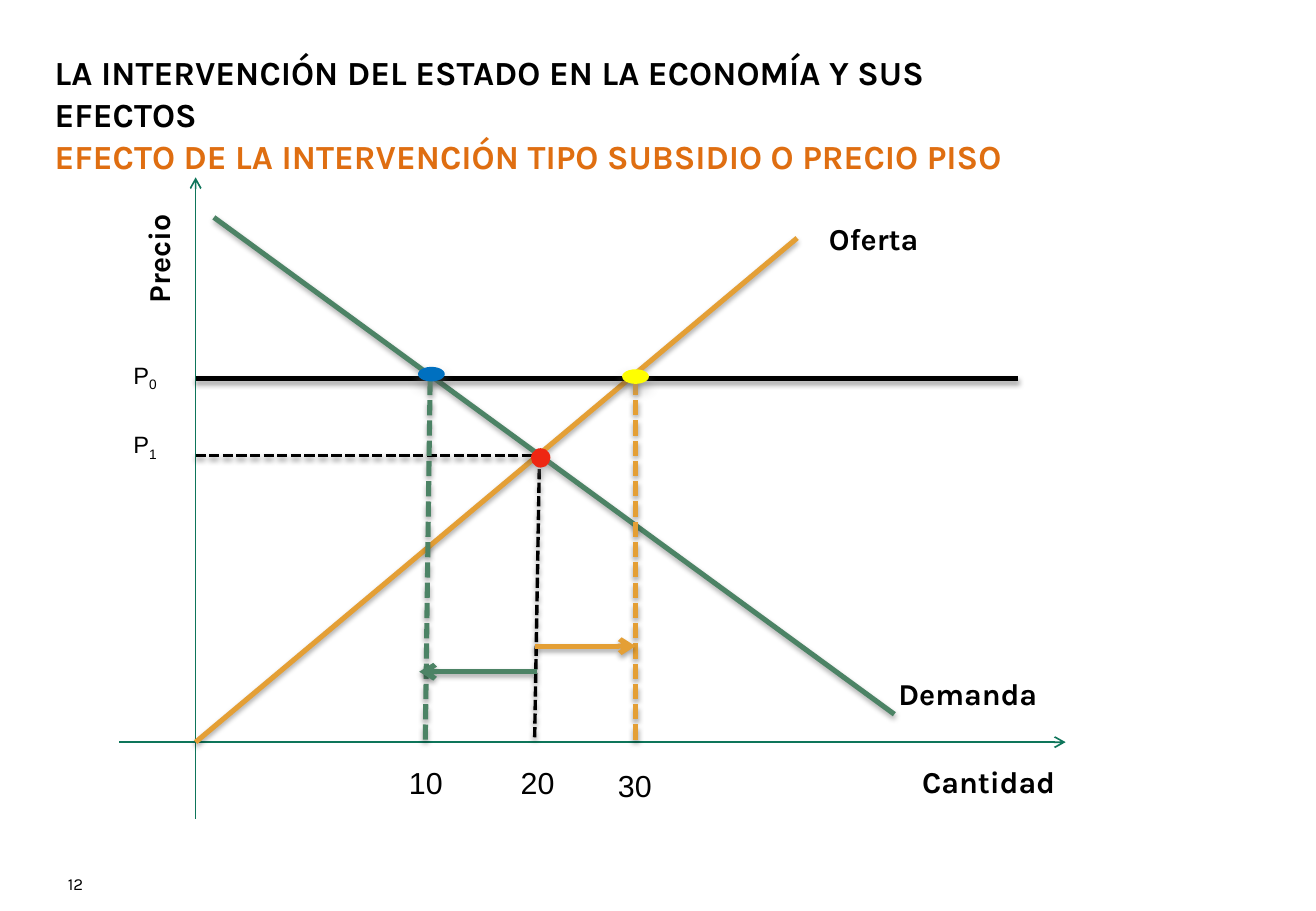
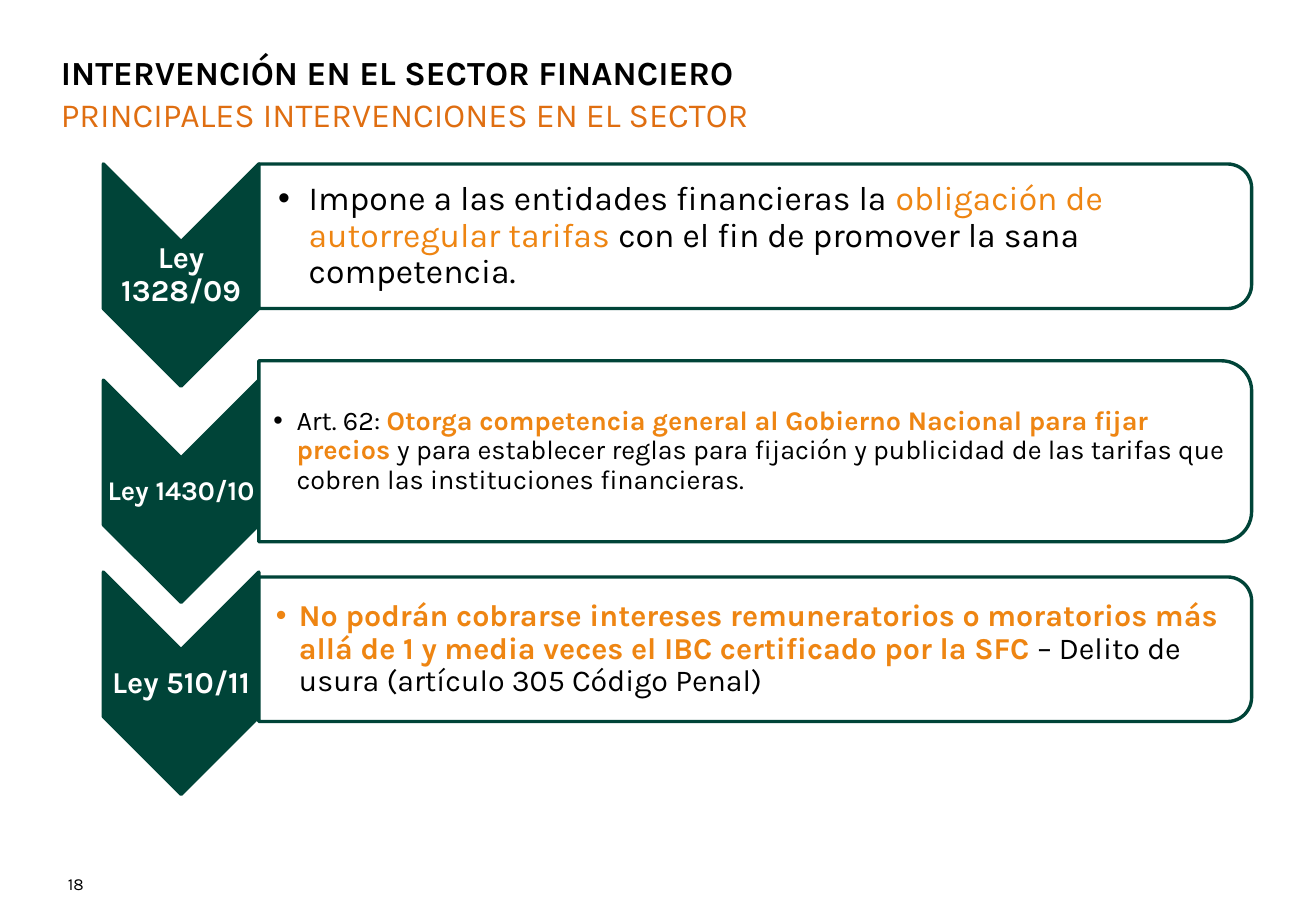
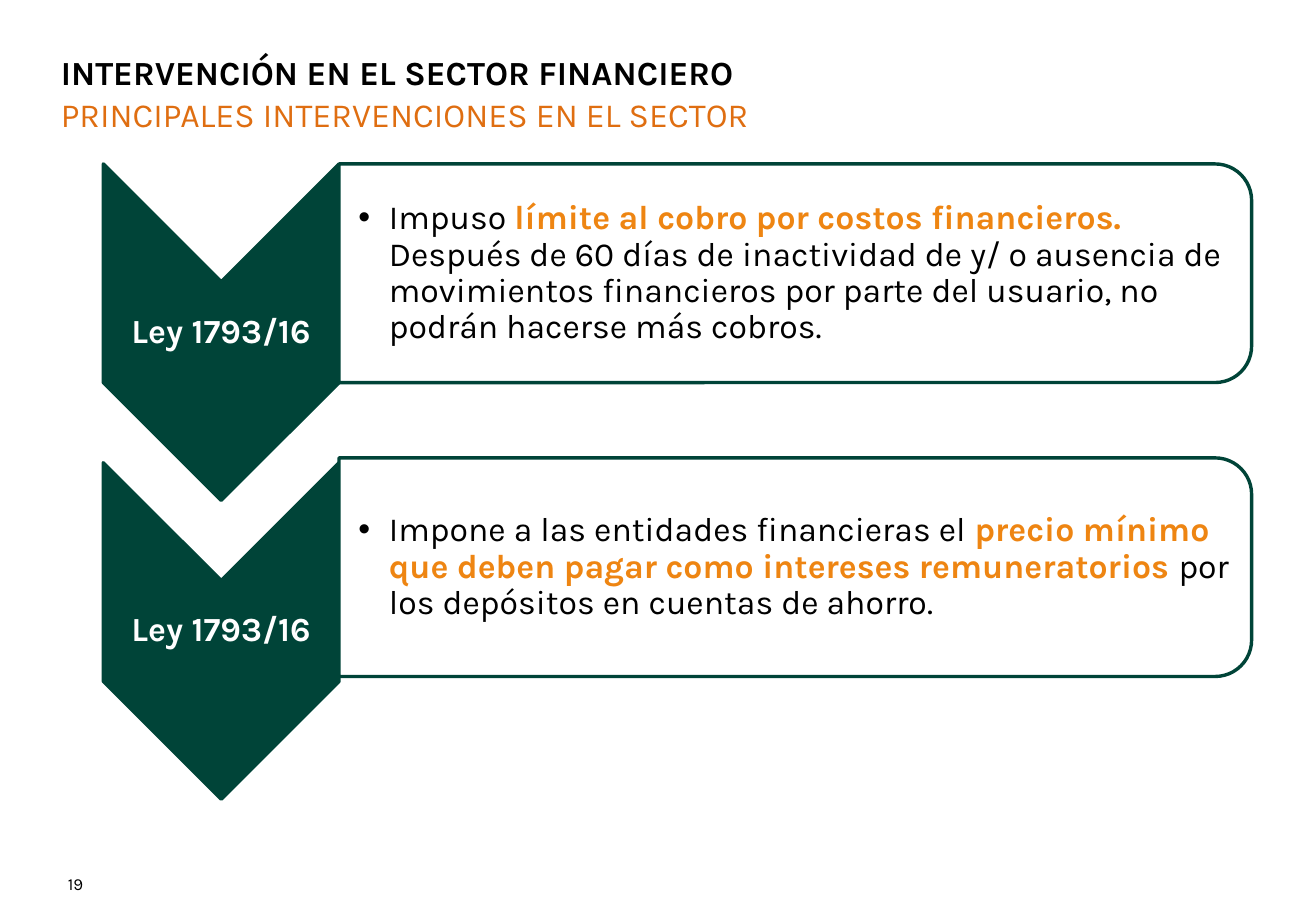
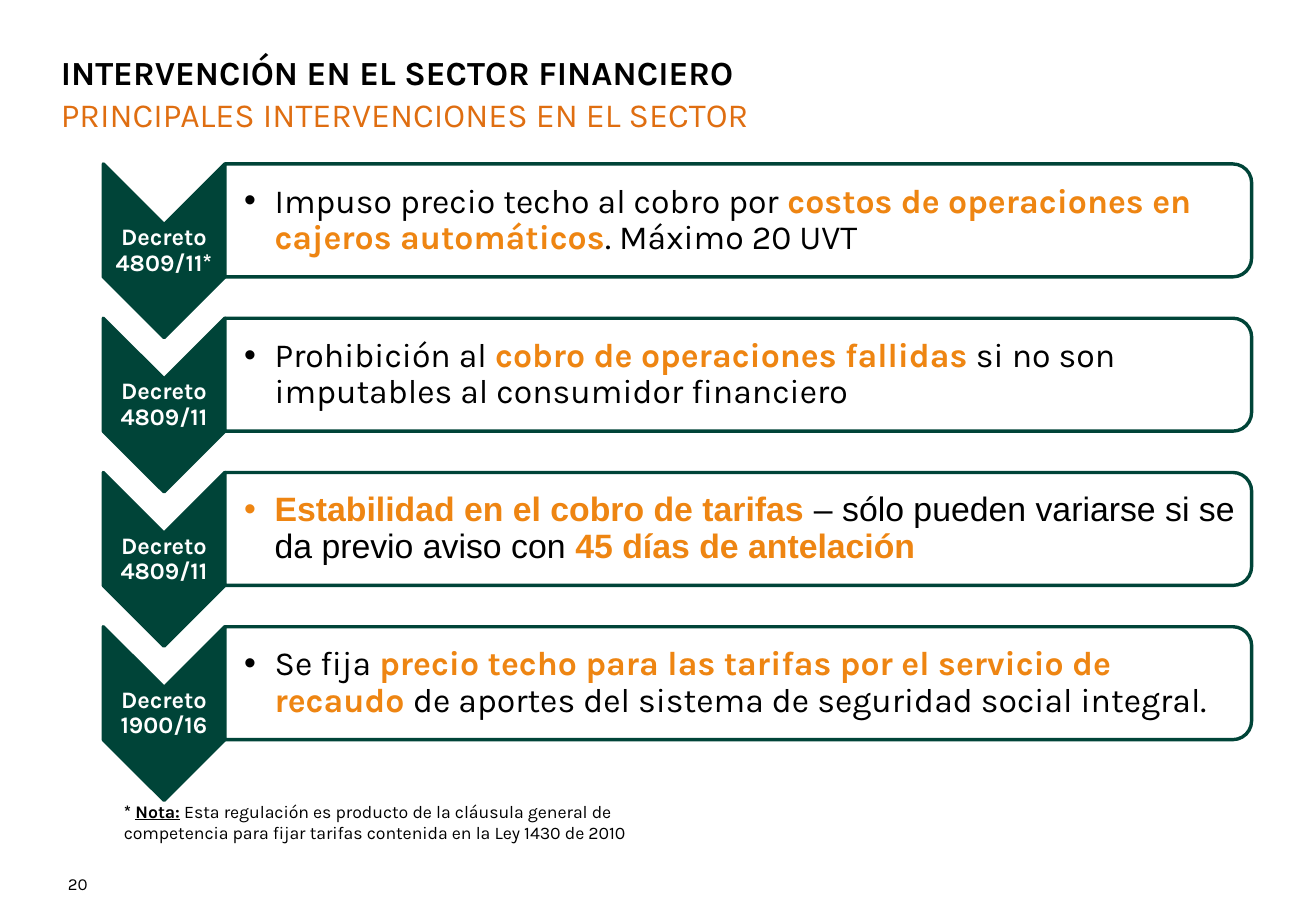
from dataclasses import dataclass

from lxml.etree import SubElement
from pptx import Presentation
from pptx.dml.color import RGBColor
from pptx.enum.dml import MSO_LINE
from pptx.enum.shapes import MSO_CONNECTOR, MSO_SHAPE
from pptx.enum.text import MSO_ANCHOR, MSO_AUTO_SIZE, PP_ALIGN
from pptx.oxml.ns import qn
from pptx.util import Inches, Pt

BLACK = "000000"
WHITE = "FFFFFF"
DARK_GREEN = "004438"
AXIS_GREEN = "0E755A"
DEMAND_GREEN = "4C8365"
SUPPLY_ORANGE = "E49F35"
TITLE_ORANGE = "DF6E11"
ACCENT_ORANGE = "EE8512"

LINE_SHADOW = (BLACK, 35, 3.1, 1.8)
DOT_SHADOW = ("808080", 47, 6.8, 4)

LIST_LEFT = 0.85
LIST_TOP = 1.35
LIST_RIGHT = 10.3


@dataclass
class Span:
    text: str
    color: str = BLACK
    bold: bool = False
    underline: bool = False
    subscript: bool = False


def accent(text, bold=True):
    return Span(text, ACCENT_ORANGE, bold)


def rgb(color):
    return RGBColor.from_string(color)


def write(para, spans, size, font="Karla"):
    for span in spans:
        run = para.add_run()
        run.text = span.text
        run.font.name = font
        run.font.size = Pt(size)
        run.font.bold = span.bold
        run.font.color.rgb = rgb(span.color)
        if span.underline:
            run.font.underline = True
        if span.subscript:
            run._r.get_or_add_rPr().set("baseline", "-25000")


def add_text(page, left, top, width, height, spans, size, font="Karla",
             align=PP_ALIGN.CENTER, anchor=MSO_ANCHOR.MIDDLE, insets=None, wrap=True):
    box = page.shapes.add_textbox(Inches(left), Inches(top), Inches(width), Inches(height))
    frame = box.text_frame
    frame.word_wrap = wrap
    frame.vertical_anchor = anchor
    if insets:
        frame.margin_left, frame.margin_top, frame.margin_right, frame.margin_bottom = map(Inches, insets)
    para = frame.paragraphs[0]
    para.alignment = align
    write(para, spans, size, font)
    return box


def add_page(deck, number, heading, subheading, left=0.4, bold_subheading=False):
    page = deck.slides.add_slide(deck.slide_layouts[5])
    title = page.shapes.title
    title.left, title.top, title.width, title.height = map(Inches, (left, 0.36, 8.57, 0.94))
    frame = title.text_frame
    frame.word_wrap = True
    frame.auto_size = MSO_AUTO_SIZE.NONE
    frame.vertical_anchor = MSO_ANCHOR.TOP
    lines = (Span(heading, bold=True), Span(subheading, TITLE_ORANGE, bold_subheading))
    for para, line in zip((frame.paragraphs[0], frame.add_paragraph()), lines):
        para.alignment = PP_ALIGN.LEFT
        para.line_spacing = Pt(25)
        write(para, [line], 20)
    add_text(page, 0.46, 7.14, 0.37, 0.27, [Span(str(number))], 10,
             align=PP_ALIGN.LEFT, anchor=MSO_ANCHOR.TOP, wrap=False)
    return page


def set_shadow(shape, shadow=None):
    effects = SubElement(shape._element.spPr, qn("a:effectLst"))
    if shadow:
        color, opacity, blur, distance = shadow
        outer = SubElement(effects, qn("a:outerShdw"), blurRad=str(Pt(blur)),
                           dist=str(Pt(distance)), dir="5400000", rotWithShape="0")
        tint = SubElement(outer, qn("a:srgbClr"), val=color)
        SubElement(tint, qn("a:alpha"), val=str(opacity * 1000))


def add_line(page, start, end, color, width=3, dashed=False, arrow=False, shadow=LINE_SHADOW):
    line = page.shapes.add_connector(MSO_CONNECTOR.STRAIGHT, *map(Inches, start + end))
    line.line.color.rgb = rgb(color)
    line.line.width = Pt(width)
    if dashed:
        line.line.dash_style = MSO_LINE.SQUARE_DOT
    if arrow:
        SubElement(line.line._get_or_add_ln(), qn("a:tailEnd"), type="arrow")
    set_shadow(line, shadow)


def add_dot(page, left, top, width, height, color):
    dot = page.shapes.add_shape(MSO_SHAPE.OVAL, Inches(left), Inches(top), Inches(width), Inches(height))
    dot.fill.solid()
    dot.fill.fore_color.rgb = rgb(color)
    dot.line.fill.background()
    set_shadow(dot, DOT_SHADOW)


def add_turned_shape(page, preset, left, top, width, height, fill):
    shift = (width - height) / 2
    shape = page.shapes.add_shape(preset, Inches(left + shift), Inches(top - shift),
                                  Inches(height), Inches(width))
    shape.rotation = 90
    shape.shadow.inherit = False
    shape.fill.solid()
    shape.fill.fore_color.rgb = rgb(fill)
    shape.line.color.rgb = rgb(DARK_GREEN)
    shape.line.width = Pt(2)


def add_chevron(page, top, width, height, label, size):
    add_turned_shape(page, MSO_SHAPE.CHEVRON, LIST_LEFT, top, width, height, DARK_GREEN)
    box = add_text(page, LIST_LEFT, top + width / 2, width, height - width,
                   [Span(label, WHITE, True)], size, insets=[0.01] * 4)
    box.text_frame.paragraphs[0].line_spacing = 0.9


def add_panel(page, left, top, height, spans, size, font="Karla"):
    width = LIST_RIGHT - left
    add_turned_shape(page, MSO_SHAPE.ROUND_2_SAME_RECTANGLE, left, top, width, height, WHITE)
    corner = height * 0.05
    margin = {16: 0.12, 18: 0.14, 20: 0.16}[size]
    indent = Inches(0.25 if size == 20 else 0.19)
    box = add_text(page, left, top + corner, width - corner, height - 2 * corner, [], size,
                   align=PP_ALIGN.LEFT, insets=(margin, 0.01, 0.01, 0.01))
    para = box.text_frame.paragraphs[0]
    para.line_spacing = 0.9
    properties = para._p.get_or_add_pPr()
    properties.set("marL", str(indent))
    properties.set("indent", str(-indent))
    SubElement(properties, qn("a:buFont"), typeface="Arial")
    SubElement(properties, qn("a:buChar"), char="•")
    write(para, spans, size, font)


def add_rule_page(deck, number):
    return add_page(deck, number, "INTERVENCIÓN EN EL SECTOR FINANCIERO",
                    "PRINCIPALES INTERVENCIONES EN EL SECTOR")


def build_subsidy_page(deck):
    page = add_page(deck, 12, "LA INTERVENCIÓN DEL ESTADO EN LA ECONOMÍA Y SUS EFECTOS",
                    "EFECTO DE LA INTERVENCIÓN TIPO SUBSIDIO O PRECIO PISO",
                    left=0.35, bold_subheading=True)
    for start, end in (((1.61, 6.74), (1.61, 1.46)), ((0.98, 6.11), (8.77, 6.11))):
        add_line(page, start, end, AXIS_GREEN, 1, arrow=True, shadow=None)

    add_line(page, (1.61, 6.11), (6.56, 1.96), SUPPLY_ORANGE)
    add_line(page, (1.76, 1.79), (7.36, 5.88), DEMAND_GREEN)
    add_line(page, (1.61, 3.75), (4.4, 3.75), BLACK, 2, dashed=True)
    add_line(page, (4.4, 6.07), (4.44, 3.75), BLACK, 2, dashed=True)
    add_line(page, (1.61, 3.12), (8.38, 3.12), BLACK)
    add_line(page, (3.5, 6.09), (3.54, 3.12), DEMAND_GREEN, dashed=True)
    add_line(page, (5.23, 6.09), (5.23, 3.1), SUPPLY_ORANGE, dashed=True)
    add_line(page, (4.4, 5.32), (5.23, 5.32), SUPPLY_ORANGE, arrow=True)
    add_line(page, (4.42, 5.53), (3.45, 5.53), DEMAND_GREEN, arrow=True)

    for name, left, top, width, rotation in (
        ("Precio", 0.67, 1.93, 1.26, 270),
        ("Oferta", 6.56, 1.76, 1.26, 0),
        ("Demanda", 7.16, 5.51, 1.61, 0),
        ("Cantidad", 7.33, 6.23, 1.61, 0),
    ):
        label = add_text(page, left, top, width, 0.4, [Span(name, bold=True)], 18)
        label.rotation = rotation
    for quantity, left, top in (("10", 3.24, 6.24), ("20", 4.16, 6.24), ("30", 4.96, 6.27)):
        add_text(page, left, top, 0.53, 0.4, [Span(quantity)], 18, "Arial")
    for index, top in (("0", 2.93), ("1", 3.5)):
        add_text(page, 0.93, top, 0.53, 0.34, [Span("P"), Span(index, subscript=True)], 14, "Arial")

    add_dot(page, 4.37, 3.69, 0.16, 0.16, "EE2712")
    add_dot(page, 3.44, 3.02, 0.22, 0.12, "0070C0")
    add_dot(page, 5.12, 3.04, 0.22, 0.12, "FFFF00")


def build_laws_page(deck):
    page = add_rule_page(deck, 18)
    width = 1.28
    laws = (
        ("Ley 1328/09", 18, LIST_TOP, LIST_TOP, 1.19, 20,
         [Span("Impone a las entidades financieras la "),
          accent("obligación de autorregular tarifas", bold=False),
          Span(" con el fin de promover la sana competencia.")]),
        ("Ley 1430/10", 16, 3.13, 2.97, 1.49, 16,
         [Span("Art. 62: "),
          accent("Otorga competencia general al Gobierno Nacional para fijar precios "),
          Span("y para establecer reglas para fijación y publicidad de las tarifas que "
               "cobren las instituciones financieras.")]),
        ("Ley 510/11", 18, 4.71, 4.75, 1.19, 18,
         [accent("No podrán cobrarse intereses remuneratorios o moratorios más allá de "
                 "1 y media veces el IBC certificado por la SFC"),
          Span(" – Delito de usura (artículo 305 Código Penal)")]),
    )
    for label, label_size, chevron_top, panel_top, height, size, spans in laws:
        add_chevron(page, chevron_top, width, 1.83, label, label_size)
        add_panel(page, LIST_LEFT + width, panel_top, height, spans, size)


def build_limits_page(deck):
    page = add_rule_page(deck, 19)
    width = 1.94
    limits = (
        (LIST_TOP, LIST_TOP,
         [Span("Impuso "), accent("límite al cobro por costos financieros."),
          Span(" Después de 60 días de inactividad de y/ o ausencia de movimientos "
               "financieros por parte del usuario, no podrán hacerse más cobros.")]),
        (3.81, 3.77,
         [Span("Impone a las entidades financieras el "),
          accent("precio mínimo que deben pagar como intereses remuneratorios "),
          Span("por los depósitos en cuentas de ahorro.")]),
    )
    for chevron_top, panel_top, spans in limits:
        add_chevron(page, chevron_top, width, 2.77, "Ley 1793/16", 20)
        add_panel(page, LIST_LEFT + width, panel_top, 1.8, spans, 20)


def build_decrees_page(deck):
    page = add_rule_page(deck, 20)
    width = 1
    decrees = (
        ("Decreto 4809/11*", "Karla",
         [Span("Impuso precio techo al cobro por "),
          accent("costos de operaciones en cajeros automáticos"),
          Span(". Máximo 20 UVT")]),
        ("Decreto 4809/11", "Karla",
         [Span("Prohibición al "), accent("cobro de operaciones fallidas"),
          Span(" si no son imputables al consumidor financiero")]),
        ("Decreto 4809/11", "Arial",
         [accent("Estabilidad en el cobro de tarifas"),
          Span(" – sólo pueden variarse si se da previo aviso con "),
          accent("45 días de antelación")]),
        ("Decreto 1900/16", "Karla",
         [Span("Se fija "),
          accent("precio techo para las tarifas por el servicio de recaudo "),
          Span("de aportes del sistema de seguridad social integral.")]),
    )
    for row, (label, font, spans) in enumerate(decrees):
        top = LIST_TOP + row * 1.27
        add_chevron(page, top, width, 1.43, label, 14)
        add_panel(page, LIST_LEFT + width, top, 0.93, spans, 20, font)
    add_text(page, 0.92, 6.54, 4.49, 0.45,
             [Span("* ", bold=True), Span("Nota:", bold=True, underline=True),
              Span(" Esta regulación es producto de la cláusula general de competencia "
                   "para fijar tarifas contenida en la Ley 1430 de 2010")],
             10.5, align=PP_ALIGN.LEFT)


def main():
    deck = Presentation()
    deck.slide_width = Inches(10.83)
    deck.slide_height = Inches(7.5)
    build_subsidy_page(deck)
    build_laws_page(deck)
    build_limits_page(deck)
    build_decrees_page(deck)
    deck.save("out.pptx")


if __name__ == "__main__":
    main()
